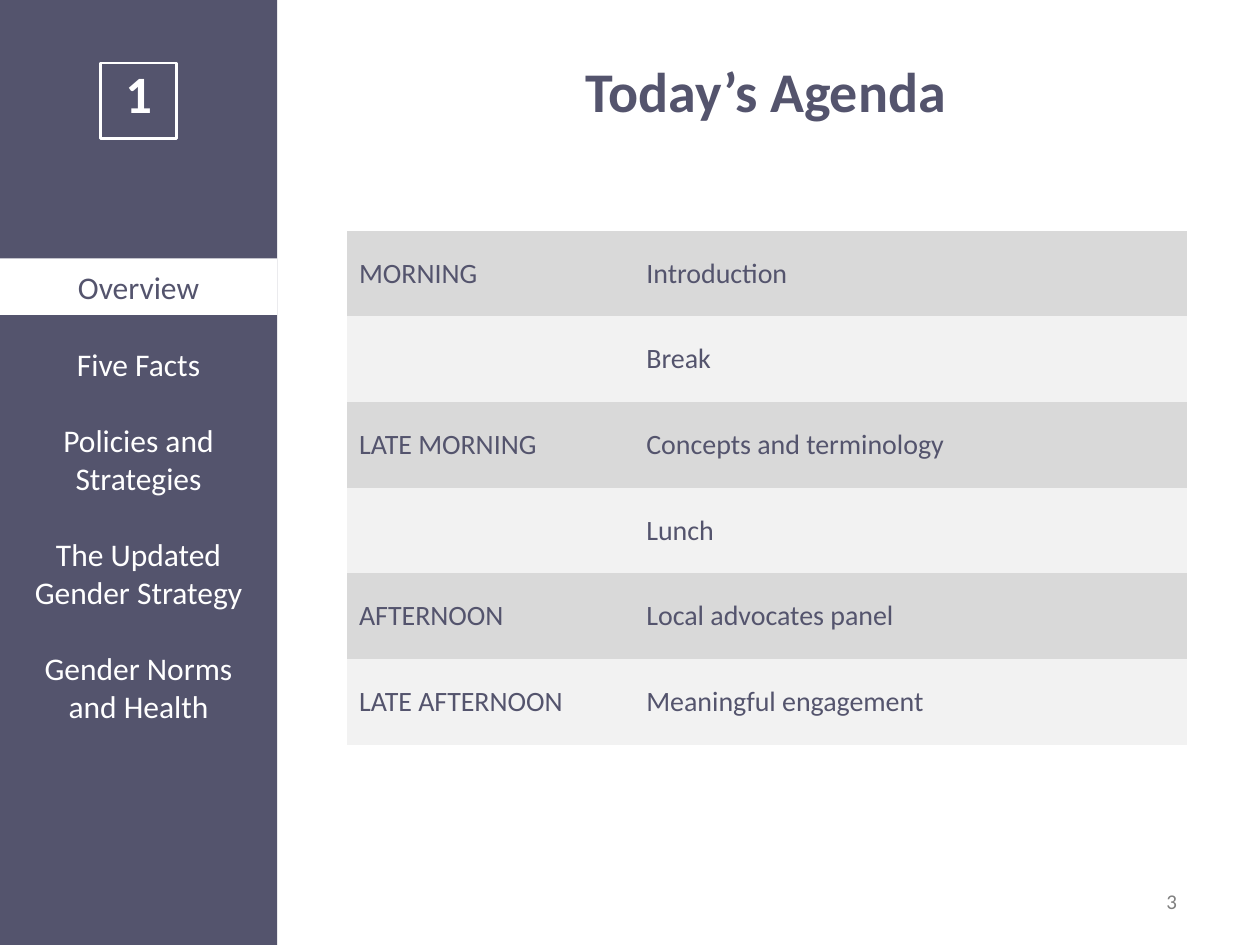
from pptx import Presentation
from pptx.dml.color import RGBColor
from pptx.enum.shapes import MSO_SHAPE
from pptx.enum.text import MSO_ANCHOR, MSO_AUTO_SIZE, PP_ALIGN
from pptx.oxml.ns import qn
from pptx.util import Inches, Pt

RECTANGLE = MSO_SHAPE.RECTANGLE
MIDDLE = MSO_ANCHOR.MIDDLE
CENTER = PP_ALIGN.CENTER
NO_GRID_STYLE = "{2D5ABB26-0587-4C30-8999-92F81FD0307C}"
COLORS = {
    "slate": "54546D",
    "white": "FFFFFF",
    "dark_band": "D9D9D9",
    "light_band": "F2F2F2",
    "gray": "808080",
}
SECTIONS = [
    "Overview",
    "Five Facts",
    "Policies and Strategies",
    "The Updated Gender Strategy",
    "Gender Norms\vand Health",
]
AGENDA = [
    ("MORNING", "Introduction"),
    ("", "Break"),
    ("LATE MORNING", "Concepts and terminology"),
    ("", "Lunch"),
    ("AFTERNOON", "Local advocates panel"),
    ("LATE AFTERNOON", "Meaningful engagement"),
]


def style(paragraph, size, color, bold=False, align=None):
    paragraph.font.name = "Calibri"
    paragraph.font.size = Pt(size)
    paragraph.font.bold = bold
    paragraph.font.color.rgb = RGBColor.from_string(COLORS[color])
    paragraph.alignment = align


def add_panel(left, top, width, height, color=None):
    panel = slide.shapes.add_shape(
        RECTANGLE, Inches(left), Inches(top), Inches(width), Inches(height))
    panel.shadow.inherit = False
    panel.line.fill.background()
    if color:
        panel.fill.solid()
        panel.fill.fore_color.rgb = RGBColor.from_string(COLORS[color])
    else:
        panel.fill.background()
    return panel


prs = Presentation()
prs.slide_width = Inches(10)
prs.slide_height = Inches(7.5)
slide = prs.slides.add_slide(prs.slide_layouts[5])

title = slide.shapes.title
title.left, title.top = Inches(2.58), Inches(0.42)
title.width, title.height = Inches(7), Inches(0.75)
title.text_frame.auto_size = MSO_AUTO_SIZE.NONE
title.text_frame.vertical_anchor = MIDDLE
heading = title.text_frame.paragraphs[0]
heading.text = "Today’s Agenda"
heading.line_spacing = 0.6
style(heading, 32, "slate", bold=True, align=CENTER)

add_panel(0, 0, 2.2, 7.5, "slate")
module_box = add_panel(0.8, 0.5, 0.6, 0.6)
module_box.line.color.rgb = RGBColor.from_string(COLORS["white"])
module_box.line.width = Pt(1.5)
module_box.text_frame.vertical_anchor = MIDDLE
module_number = module_box.text_frame.paragraphs[0]
module_number.text = "1"
module_number.line_spacing = 0.7
style(module_number, 30, "white", bold=True, align=CENTER)
add_panel(0, 2.05, 2.2, 0.45, "white")

navigation = slide.shapes.add_textbox(
    Inches(0), Inches(2.09), Inches(2.2), Inches(3.7)).text_frame
navigation.word_wrap = True
navigation.vertical_anchor = MIDDLE
for index, section in enumerate(SECTIONS):
    entry = navigation.add_paragraph() if index else navigation.paragraphs[0]
    entry.text = section
    entry.space_before = Pt(22 if index else 0)
    style(entry, 18, "white" if index else "slate", align=CENTER)

agenda_frame = slide.shapes.add_table(
    len(AGENDA), 2, Inches(2.75), Inches(1.83), Inches(6.67), Inches(4.08))
next(agenda_frame.element.iter(qn("a:tableStyleId"))).text = NO_GRID_STYLE
agenda = agenda_frame.table
agenda.first_row = False
agenda.horz_banding = False
agenda.columns[0].width = Inches(2.28)
agenda.columns[1].width = Inches(4.39)
for row, entries in enumerate(AGENDA):
    band = "light_band" if row % 2 else "dark_band"
    for column, entry in enumerate(entries):
        cell = agenda.cell(row, column)
        cell.fill.solid()
        cell.fill.fore_color.rgb = RGBColor.from_string(COLORS[band])
        cell.vertical_anchor = MIDDLE
        cell.margin_left = cell.margin_right = Inches(0.1)
        cell.margin_top = cell.margin_bottom = Inches(0.1)
        cell.text = entry
        style(cell.text_frame.paragraphs[0], 16, "slate")

page = slide.shapes.add_textbox(
    Inches(9.16), Inches(7), Inches(0.84), Inches(0.3)).text_frame
page.word_wrap = True
page.auto_size = MSO_AUTO_SIZE.SHAPE_TO_FIT_TEXT
page.text = "3"
style(page.paragraphs[0], 12, "gray")

prs.save("out.pptx")
